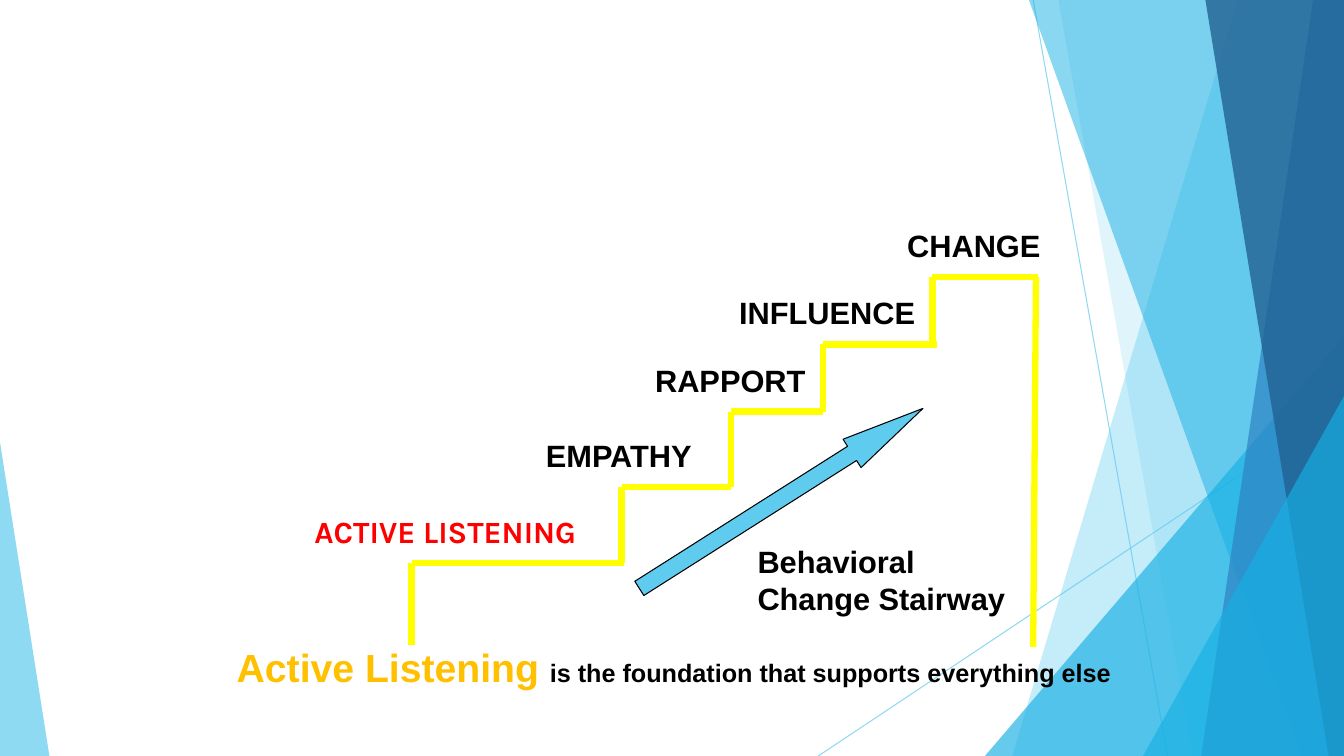
from lxml.etree import SubElement
from pptx import Presentation
from pptx.dml.color import RGBColor
from pptx.enum.shapes import MSO_CONNECTOR as Connector, MSO_SHAPE as Shape
from pptx.enum.text import MSO_AUTO_SIZE as AutoSize, PP_ALIGN as Align
from pptx.oxml.ns import qn
from pptx.util import Pt

WIDTH, HEIGHT = 960, 540
SKY, CYAN, BLUE, NAVY = "5FCBEF", "17B0E4", "2E83C3", "226292"
BLACK, YELLOW, RED, GOLD = "000000", "FFFF00", "FF0000", "FFC000"


def color(hex_string):
    return RGBColor.from_string(hex_string)


class StairwaySlide:
    """Holds the text style and the current slide."""

    font = {"name": "Arial", "size": Pt(22), "bold": True}

    def __init__(self, presentation):
        self.slide = presentation.slides.add_slide(presentation.slide_layouts[6])
        self.shapes = self.slide.shapes

    def paint(self, fill, hex_string, opacity=100):
        fill.solid()
        fill.fore_color.rgb = color(hex_string)
        if opacity < 100:
            # The color element sits inside the solid fill
            tint = next(fill._xPr.iter(qn("a:srgbClr")))
            SubElement(tint, qn("a:alpha"), val=str(opacity * 1000))

    def line(self, start, end, hex_string, width, opacity=100):
        points = [Pt(value) for value in (*start, *end)]
        connector = self.shapes.add_connector(Connector.STRAIGHT, *points)
        connector.line.width = Pt(width)
        self.paint(connector.line.fill, hex_string, opacity)
        SubElement(connector._element.spPr, qn("a:effectLst"))

    def polygon(self, points, hex_string, opacity):
        corners = [(Pt(x), Pt(y)) for x, y in points]
        builder = self.shapes.build_freeform(*corners[0], scale=1.0)
        builder.add_line_segments(corners[1:], close=True)
        self.finish(builder.convert_to_shape(), hex_string, opacity)

    def preset(self, kind, box, adjustments, hex_string, opacity=100,
               outline=None, rotation=0):
        shape = self.shapes.add_shape(kind, *[Pt(value) for value in box])
        for index, value in enumerate(adjustments):
            shape.adjustments[index] = value
        shape.rotation = rotation
        self.finish(shape, hex_string, opacity, outline)

    def finish(self, shape, hex_string, opacity, outline=None):
        shape.shadow.inherit = False
        self.paint(shape.fill, hex_string, opacity)
        if outline:
            shape.line.width = Pt(0.75)
            self.paint(shape.line.fill, outline)
        else:
            shape.line.fill.background()

    def text(self, box, paragraphs, inset=(0, 0), align=Align.LEFT,
             auto_size=AutoSize.NONE):
        """Each paragraph is a list of (text, color, font changes)."""
        frame = self.shapes.add_textbox(*[Pt(value) for value in box]).text_frame
        across, down = Pt(inset[0]), Pt(inset[1])
        settings = {"word_wrap": True, "auto_size": auto_size,
                    "margin_left": across, "margin_right": across,
                    "margin_top": down, "margin_bottom": down}
        for name, value in settings.items():
            setattr(frame, name, value)
        for index, runs in enumerate(paragraphs):
            paragraph = frame.add_paragraph() if index else frame.paragraphs[0]
            paragraph.alignment = align
            for words, hex_string, changes in runs:
                run = paragraph.add_run()
                run.text = words
                for name, value in {**self.font, **changes}.items():
                    setattr(run.font, name, value)
                run.font.color.rgb = color(hex_string)


def add_backdrop(page):
    page.line((738, 0), (834, HEIGHT), SKY, 0.75, 70)
    page.line((WIDTH, 290), (584.5, HEIGHT), SKY, 0.75, 70)

    # Bands run from a slanted left edge to the right side of the slide
    def band(top, bottom, hex_string, opacity):
        page.polygon([(top, 0), (WIDTH, 0), (WIDTH, HEIGHT), (bottom, HEIGHT)],
                     hex_string, opacity)

    def wedge(left, top, width, peak, hex_string, opacity):
        page.preset(Shape.ISOSCELES_TRIANGLE, (left, top, width, HEIGHT - top),
                    [peak], hex_string, opacity)

    band(884, 723, SKY, 36)
    band(756, 852, SKY, 20)
    wedge(703.5, 240, 256.5, 1, CYAN, 66)
    band(735, 929.5, CYAN, 50)
    band(938, 858, BLUE, 70)
    band(861, 949, NAVY, 80)
    wedge(816.5, 283, 143.5, 1, CYAN, 66)
    wedge(0, 316, 35.3, 0, SKY, 70)


def add_stairs(page):
    # Left end, right end and height of each tread, from the bottom up
    treads = [(294, 446, 402), (444, 522, 348), (522, 588, 294),
              (588, 669.6, 246), (666, 741.6, 198)]
    below = 461
    for left, right, level in treads:
        page.line((left, below), (left, level), YELLOW, 4.5)
        page.line((left, level), (right, level), YELLOW, 4.5)
        below = level
    page.line((740, 198), (738, 462), YELLOW, 4.5)

    # Step names
    steps = [("CHANGE", 648, 162, 132), ("INFLUENCE", 528, 210, 132),
             ("RAPPORT", 468, 258, 138), ("EMPATHY", 390, 312, 122)]
    for name, left, top, width in steps:
        page.text((left, top, width, 38), [[(name, BLACK, {})]])
    page.text((204, 366, 228, 42), [[("ACTIVE LISTENING", RED, {"name": "Karla"})]],
              align=Align.CENTER)


def add_captions(page):
    grow = {"inset": (7.2, 3.6), "auto_size": AutoSize.SHAPE_TO_FIT_TEXT}
    page.text((162, 456, 642, 41),
              [[("Active Listening ", GOLD, {"size": Pt(28)}),
                ("is the foundation that supports everything else", BLACK,
                 {"size": Pt(18)})]], **grow)
    page.text((534, 384, 198, 60.5),
              [[("Behavioral", BLACK, {})], [("Change Stairway", BLACK, {})]], **grow)


def main():
    presentation = Presentation()
    presentation.slide_width, presentation.slide_height = Pt(WIDTH), Pt(HEIGHT)
    page = StairwaySlide(presentation)
    add_backdrop(page)
    add_stairs(page)
    add_captions(page)
    # Arrow climbing along the stairs
    page.preset(Shape.RIGHT_ARROW, (438, 344, 240, 24), [0.5, 2.5], SKY,
                outline=BLACK, rotation=327.6)
    presentation.save("out.pptx")


if __name__ == "__main__":
    main()
